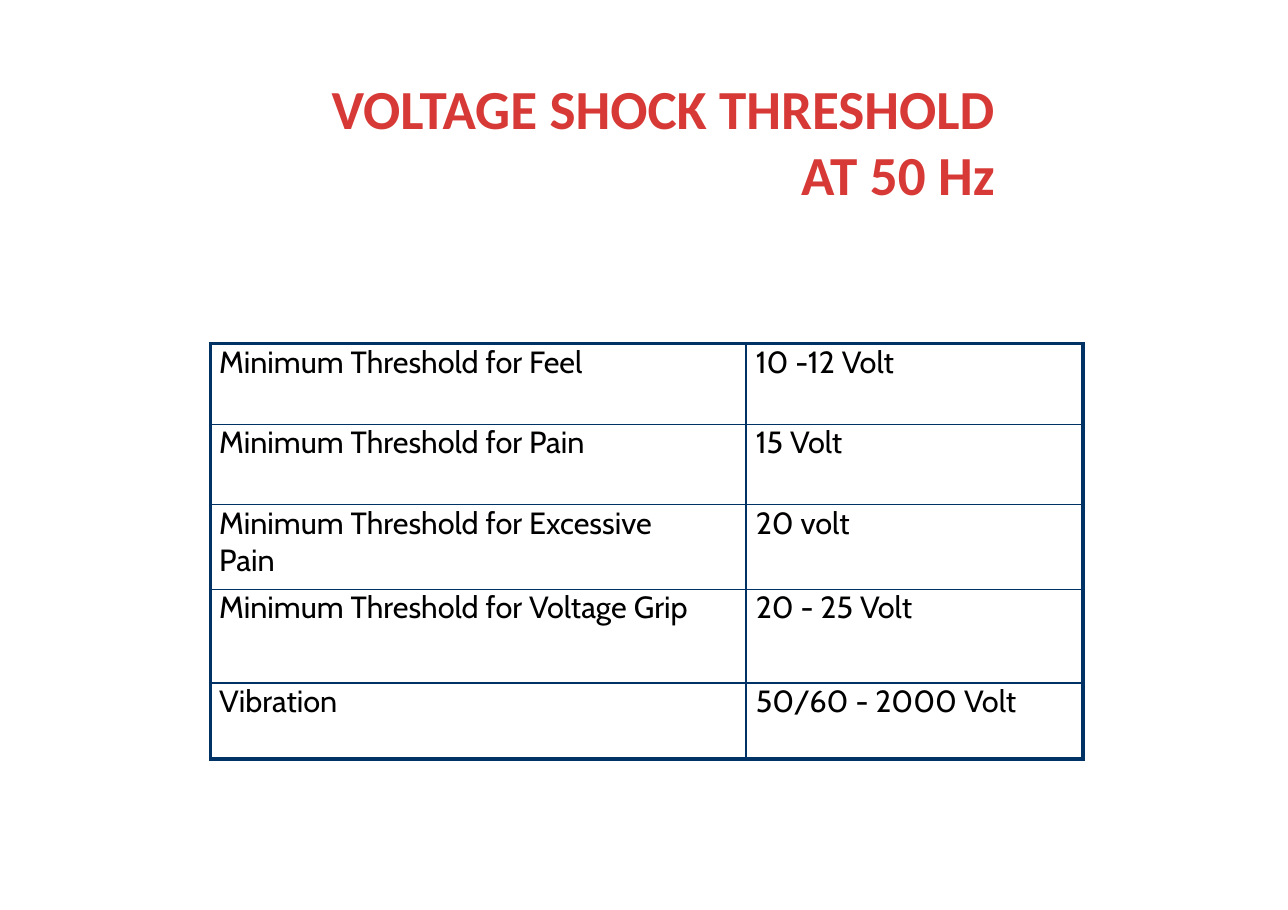
from dataclasses import dataclass

from lxml.etree import SubElement
from pptx import Presentation
from pptx.dml.color import RGBColor
from pptx.enum.text import MSO_ANCHOR, MSO_AUTO_SIZE, PP_ALIGN
from pptx.oxml.ns import qn
from pptx.util import Inches, Pt


@dataclass(frozen=True)
class Theme:
    red: str = "D73A36"
    navy: str = "003265"
    black: str = "000000"
    white: str = "FFFFFF"
    title_font: str = "Calibri"
    body_font: str = "Cabin"
    title_size: int = 36
    body_size: int = 20


theme = Theme()


def add_span(para, text, font, size, color, bold=False):
    span = para.add_run()
    span.text = text
    span.font.name = font
    span.font.size = Pt(size)
    span.font.bold = bold
    span.font.color.rgb = RGBColor.from_string(color)


def add_border(cell, edge, width):
    line = SubElement(cell._tc.get_or_add_tcPr(), qn(f"a:{edge}"), w=str(Pt(width)))
    fill = SubElement(line, qn("a:solidFill"))
    SubElement(fill, qn("a:srgbClr"), val=theme.navy)


deck = Presentation()
deck.slide_width = Inches(11.69)
deck.slide_height = Inches(8.26)
page = deck.slides.add_slide(deck.slide_layouts[5])

title = page.shapes.title
title.left, title.top = Inches(2.92), Inches(0.67)
title.width, title.height = Inches(6.11), Inches(1.21)
frame = title.text_frame
frame.word_wrap = True
frame.auto_size = MSO_AUTO_SIZE.NONE
frame.vertical_anchor = MSO_ANCHOR.MIDDLE
frame.margin_left = frame.margin_right = frame.margin_top = frame.margin_bottom = 0
para = frame.paragraphs[0]
para.alignment = PP_ALIGN.RIGHT
para.line_spacing = Pt(43.2)
add_span(para, "VOLTAGE SHOCK THRESHOLD AT 50 Hz",
         theme.title_font, theme.title_size, theme.red, True)

thresholds = [
    ("Minimum Threshold for Feel", "10 -12 Volt"),
    ("Minimum Threshold for Pain", "15 Volt"),
    ("Minimum Threshold for Excessive Pain", "20 volt"),
    ("Minimum Threshold for Voltage Grip", "20 - 25 Volt"),
    ("Vibration", "50/60 - 2000 Volt"),
]
column_widths = [4.86, 3.06]
row_heights = [0.73, 0.73, 0.77, 0.85, 0.69]
left_margins = [0.08, 0.09]
right_margins = [0.4, 0]
vertical_rules = [2.28, 0.96, 2.28]
horizontal_rules = [2.28, 0.96, 1.08, 1.08, 0.96, 2.28]

table = page.shapes.add_table(
    len(thresholds), len(column_widths), Inches(1.91), Inches(3.12),
    Inches(sum(column_widths)), Inches(sum(row_heights))).table
table.first_row = False
table.horz_banding = False
for column, width in zip(table.columns, column_widths):
    column.width = Inches(width)

for r, texts in enumerate(thresholds):
    table.rows[r].height = Inches(row_heights[r])
    for c, text in enumerate(texts):
        cell = table.cell(r, c)
        cell.margin_left = Inches(left_margins[c])
        cell.margin_right = Inches(right_margins[c])
        cell.margin_top = cell.margin_bottom = 0
        cell.vertical_anchor = MSO_ANCHOR.TOP
        add_border(cell, "lnL", vertical_rules[c])
        add_border(cell, "lnR", vertical_rules[c + 1])
        add_border(cell, "lnT", horizontal_rules[r])
        add_border(cell, "lnB", horizontal_rules[r + 1])
        cell.fill.solid()
        cell.fill.fore_color.rgb = RGBColor.from_string(theme.white)
        add_span(cell.text_frame.paragraphs[0], text,
                 theme.body_font, theme.body_size, theme.black)

deck.save("out.pptx")
